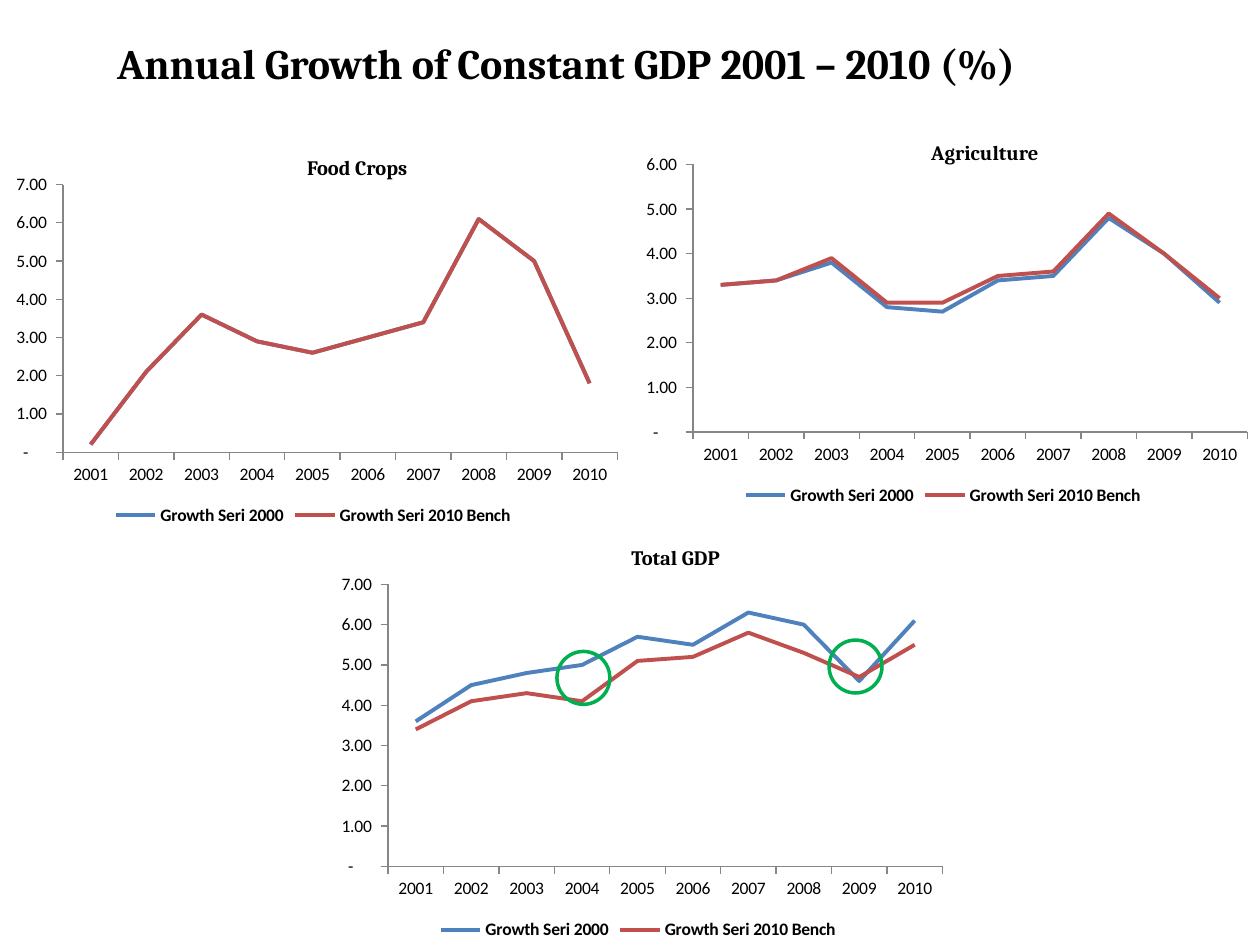
from pptx import Presentation
from pptx import util as u
from pptx.chart.data import CategoryChartData
from pptx.dml.color import RGBColor
from pptx.enum import chart as ch, shapes, text

# Content
TITLE = "Annual Growth of Constant GDP 2001 – 2010 (%)"
YEARS = [str(y) for y in range(2001, 2011)]
NAMES = ["Growth Seri 2000", "Growth Seri 2010 Bench "]
FOOD = [0.2, 2.1, 3.6, 2.9, 2.6, 3, 3.4, 6.1, 5, 1.8]
# heading, heading box, chart box, axis top, one list per series
PANELS = [
    ("Agriculture ", (5.5, 0.83, 4.67, 0.75), (5, 1.17, 5, 2.88), 6,
     [[3.3, 3.4, 3.8, 2.8, 2.7, 3.4, 3.5, 4.8, 4, 2.9],
      [3.3, 3.4, 3.9, 2.9, 2.9, 3.5, 3.6, 4.9, 4, 3]]),
    ("Food Crops", (0.42, 1.08, 4.83, 0.5), (0, 1.33, 5, 2.88), 7,
     [FOOD, FOOD]),
    ("Total GDP ", (3.17, 4.17, 4.42, 0.5), (2.58, 4.5, 5, 3), 7,
     [[3.6, 4.5, 4.8, 5, 5.7, 5.5, 6.3, 6, 4.6, 6.1],
      [3.4, 4.1, 4.3, 4.1, 5.1, 5.2, 5.8, 5.3, 4.7, 5.5]]),
]
RINGS = [(4.42, 5.17), (6.58, 5.08)]
RING = 0.42
FORMAT = r'_(* #,##0.00_);_(* \(#,##0.00\);_(* "-"??_);_(@_)'
COLORS = {"text": "000000", "axis": "868686", "ring": "00B050",
          "lines": ["4F81BD", "C0504D"]}


def rgb(code):
    return RGBColor.from_string(code)


def inches(box):
    return [u.Inches(n) for n in box]


def style(font, size, face, bold=False):
    font.size, font.name, font.bold = u.Pt(size), face, bold
    font.color.rgb = rgb(COLORS["text"])


def heading(slide, words, box):
    frame = slide.shapes.add_textbox(*inches(box)).text_frame
    frame.word_wrap = True
    frame.vertical_anchor = text.MSO_ANCHOR.MIDDLE
    par = frame.paragraphs[0]
    par.text, par.alignment = words, text.PP_ALIGN.CENTER
    style(par.font, 11.7, "Cambria", True)


def line_chart(slide, box, top, rows):
    data = CategoryChartData(number_format="0.0")
    data.categories = YEARS
    for name, row in zip(NAMES, rows):
        data.add_series(name, row)
    chart = slide.shapes.add_chart(
        ch.XL_CHART_TYPE.LINE, *inches(box), data).chart
    style(chart.font, 10, "Calibri")
    chart.has_title = False
    chart.has_legend = True
    chart.legend.position = ch.XL_LEGEND_POSITION.BOTTOM
    chart.legend.include_in_layout = False
    style(chart.legend.font, 10, "Calibri", True)

    # Axes
    for axis in (chart.category_axis, chart.value_axis):
        axis.has_major_gridlines = False
        axis.major_tick_mark = ch.XL_TICK_MARK.OUTSIDE
        axis.minor_tick_mark = ch.XL_TICK_MARK.NONE
        axis.format.line.color.rgb = rgb(COLORS["axis"])
        style(axis.tick_labels.font, 10, "Calibri")
    value = chart.value_axis
    value.minimum_scale, value.maximum_scale, value.major_unit = 0, top, 1
    value.tick_labels.number_format = FORMAT
    value.tick_labels.number_format_is_linked = False

    # Lines
    plot = chart.plots[0]
    plot.vary_by_categories = False
    for series, color in zip(plot.series, COLORS["lines"]):
        series.smooth = False
        series.marker.style = ch.XL_MARKER_STYLE.NONE
        series.format.line.width = u.Pt(2.25)
        series.format.line.color.rgb = rgb(color)


def main():
    prs = Presentation()
    prs.slide_width, prs.slide_height = u.Inches(10), u.Inches(7.5)
    slide = prs.slides.add_slide(prs.slide_layouts[5])

    # Title
    title = slide.shapes.title
    title.left, title.top, title.width, title.height = inches(
        (0.83, 0.08, 8.67, 0.83))
    title.text_frame.vertical_anchor = text.MSO_ANCHOR.MIDDLE
    par = title.text_frame.paragraphs[0]
    par.text, par.alignment = TITLE, text.PP_ALIGN.LEFT
    style(par.font, 24, "Cambria", True)

    # Headings and charts
    for words, place, box, top, rows in PANELS:
        heading(slide, words, place)
        line_chart(slide, box, top, rows)

    # Rings around the two marked years
    for left, top in RINGS:
        ring = slide.shapes.add_shape(
            shapes.MSO_SHAPE.OVAL, *inches((left, top, RING, RING)))
        ring.shadow.inherit = False
        ring.fill.background()
        ring.line.color.rgb = rgb(COLORS["ring"])
        ring.line.width = u.Pt(2)

    prs.save("out.pptx")


if __name__ == "__main__":
    main()
